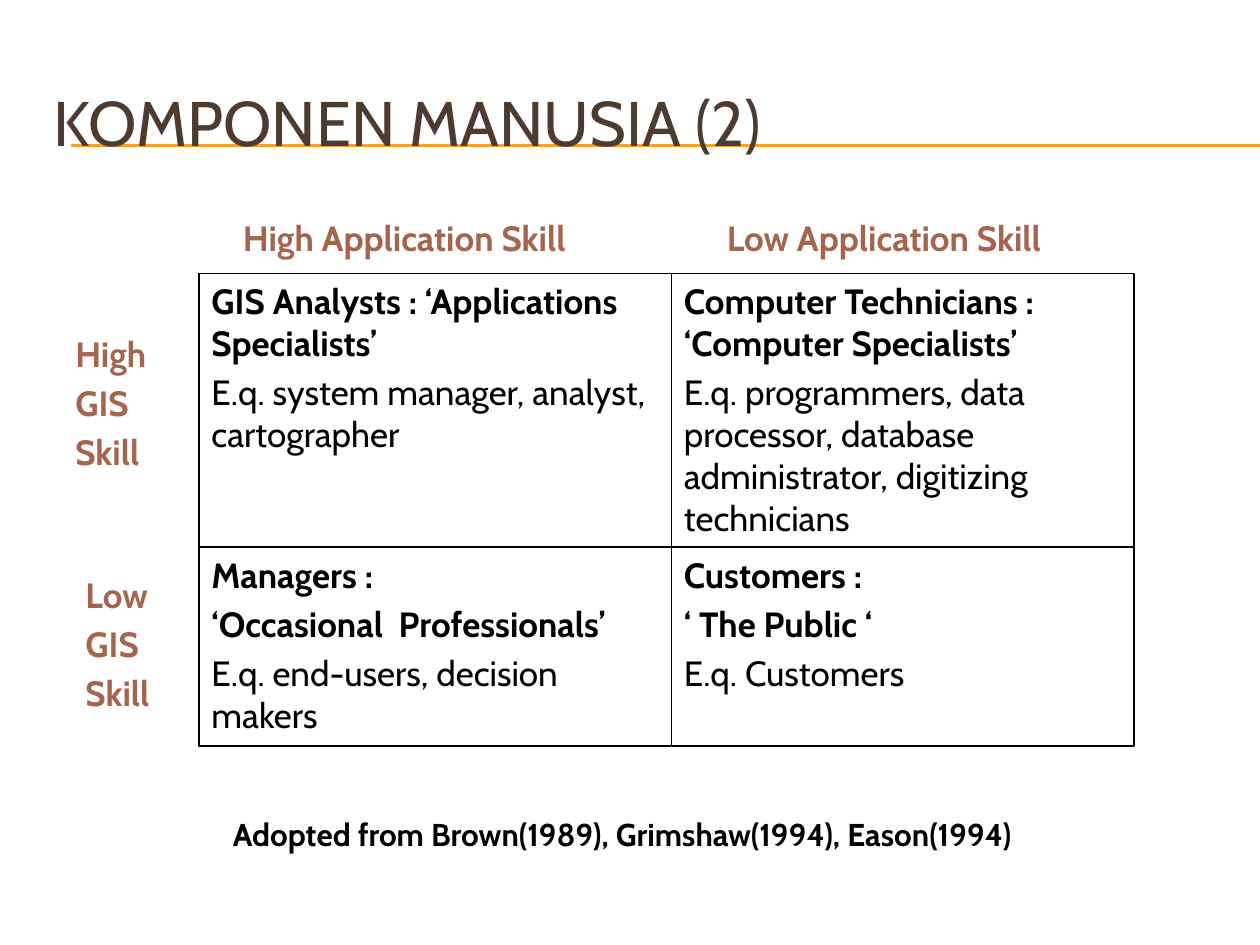
import pptx
import pptx.dml.color
import pptx.enum.shapes
import pptx.enum.text
import pptx.oxml.ns
import pptx.util
from lxml import etree

SLIDE_WIDTH, SLIDE_HEIGHT = 10, 7.5
FONT = "Cabin"
BROWN, RUST, GOLD, BLACK = "4E3B30", "A5644E", "F0A22E", "000000"
LABEL = {"size": 20, "bold": True, "color": RUST}
BODY = {"size": 20, "color": BLACK}

# (left, top, width, height), paragraphs, format
TITLE = ((0.33, 0.5, 9.5, 0.92), ["KOMPONEN MANUSIA (2)"], {"size": 36, "color": BROWN})
CREDIT = ((1.75, 6.42, 7.09, 0.4),
          ["Adopted from Brown(1989), Grimshaw(1994), Eason(1994)"],
          {"size": 18, "bold": True, "color": BLACK})
LABELS = [
    ((1.83, 1.67, 3.42, 0.43), ["High Application Skill"], LABEL),
    ((5.67, 1.67, 2.99, 0.43), ["Low Application Skill"], LABEL),
    ((0.5, 2.59, 0.9, 1.23), ["High", "GIS", "Skill"], LABEL),
    ((0.58, 4.5, 0.77, 1.23), ["Low", "GIS", "Skill"], LABEL),
]

# Rows are GIS skill, columns are application skill: (heading paragraphs, example)
MATRIX = [
    [(["GIS Analysts : ‘Applications Specialists’"],
      "E.q. system manager, analyst, cartographer"),
     (["Computer Technicians :  ‘Computer Specialists’"],
      "E.q. programmers, data processor, database administrator, digitizing technicians")],
    [(["Managers :", "‘Occasional  Professionals’"], "E.q. end-users, decision makers"),
     (["Customers :", "‘ The Public ‘"], "E.q. Customers")],
]
COLUMN_EDGES = [1.58, 5.33, 9]
ROW_EDGES = [2.17, 4.34, 5.92]
RULE_LEFT, RULE_TOPS = 0.56, [1.15, 1.16]


def rgb(value):
    return pptx.dml.color.RGBColor.from_string(value)


def inches(*lengths):
    return [pptx.util.Inches(length) for length in lengths]


def write(frame, paragraphs, anchor=pptx.enum.text.MSO_ANCHOR.TOP):
    """Fill a text frame from (text, format) pairs."""
    frame.word_wrap = True
    frame.vertical_anchor = anchor
    for index, (text, style) in enumerate(paragraphs):
        paragraph = frame.add_paragraph() if index else frame.paragraphs[0]
        paragraph.alignment = pptx.enum.text.PP_ALIGN.LEFT
        paragraph.space_before = pptx.util.Pt(4 if index else 0)
        run = paragraph.add_run()
        run.text = text
        values = {"name": FONT, "bold": False, **style}
        values["size"] = pptx.util.Pt(values["size"])
        run.font.color.rgb = rgb(values.pop("color"))
        for key, value in values.items():
            setattr(run.font, key, value)


def add_text(slide, place, lines, style, **options):
    frame = slide.shapes.add_textbox(*inches(*place)).text_frame
    write(frame, [(line, style) for line in lines], **options)


def add_rule(slide, top):
    rule = slide.shapes.add_connector(
        pptx.enum.shapes.MSO_CONNECTOR.STRAIGHT,
        *inches(RULE_LEFT, top, SLIDE_WIDTH, top))
    rule.line.color.rgb = rgb(GOLD)
    rule.line.width = pptx.util.Pt(0.75)
    etree.SubElement(rule._element.spPr, pptx.oxml.ns.qn("a:effectLst"))


def add_quadrant(slide, row, column, headings, example):
    left, right = COLUMN_EDGES[column:column + 2]
    top, bottom = ROW_EDGES[row:row + 2]
    quadrant = slide.shapes.add_shape(
        pptx.enum.shapes.MSO_SHAPE.RECTANGLE,
        *inches(left, top, right - left, bottom - top))
    quadrant.shadow.inherit = False
    quadrant.fill.background()
    quadrant.line.color.rgb = rgb(BLACK)
    quadrant.line.width = pptx.util.Pt(0.75)
    paragraphs = [(heading, {**BODY, "bold": True}) for heading in headings]
    write(quadrant.text_frame, paragraphs + [(example, BODY)])


def main():
    deck = pptx.Presentation()
    deck.slide_width, deck.slide_height = inches(SLIDE_WIDTH, SLIDE_HEIGHT)
    slide = deck.slides.add_slide(deck.slide_layouts[6])

    for top in RULE_TOPS:
        add_rule(slide, top)
    add_text(slide, *TITLE, anchor=pptx.enum.text.MSO_ANCHOR.MIDDLE)
    for place, lines, style in [CREDIT, *LABELS]:
        add_text(slide, place, lines, style)
    for row, quadrants in enumerate(MATRIX):
        for column, (headings, example) in enumerate(quadrants):
            add_quadrant(slide, row, column, headings, example)

    deck.save("out.pptx")


if __name__ == "__main__":
    main()
